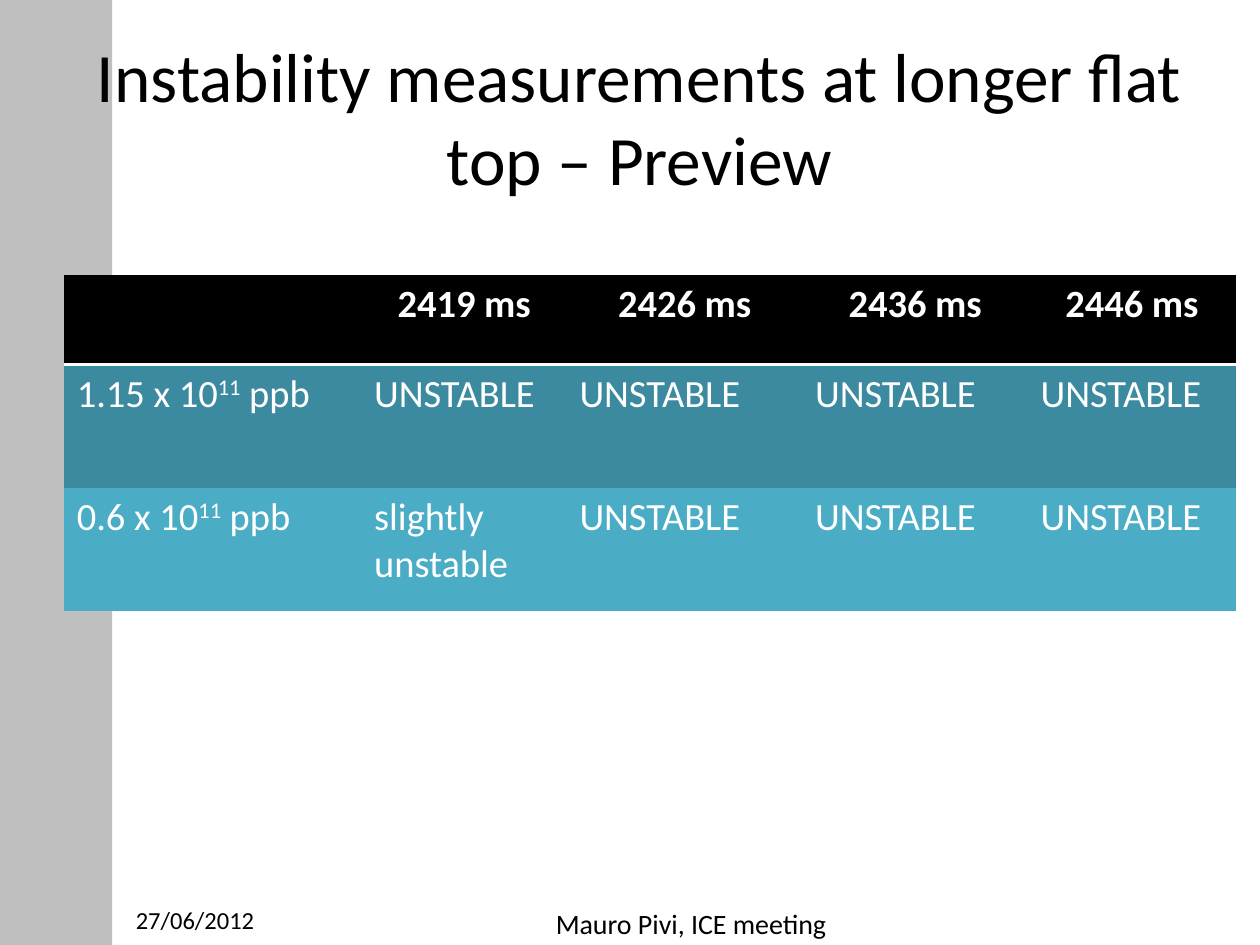
from dataclasses import dataclass

from lxml import etree
from pptx import Presentation
from pptx import util as u
from pptx.dml.color import RGBColor
from pptx.enum import shapes, text
from pptx.oxml.ns import qn


@dataclass(frozen=True)
class Theme:
    font: str = "Calibri"
    ink: str = "000000"
    paper: str = "FFFFFF"
    band: str = "BFBFBF"
    row_fills: tuple = ("000000", "3C8A9F", "4BACC6")
    title_size: float = 39.6
    table_size: float = 22
    date_size: float = 14
    footer_size: float = 16


@dataclass(frozen=True)
class Box:
    """Left, top, width and height in percent of the slide."""
    left: float
    top: float
    width: float
    height: float


@dataclass(frozen=True)
class Label:
    words: str
    box: Box
    size: float
    align: text.PP_ALIGN


THEME = Theme()
WIDTH, HEIGHT = u.Inches(10), u.Inches(7.5)
LEFT, CENTER = text.PP_ALIGN.LEFT, text.PP_ALIGN.CENTER
NO_TABLE_STYLE = "{2D5ABB26-0587-4C30-8999-92F81FD0307C}"

TABLE_BOX = Box(5.1, 29.07, 93, 35.6)
COLUMN_SHARES = (23.6, 16.3, 18.7, 17.9, 16.5)
ROW_SHARES = (9.47, 13.07, 13.07)
# A caret pair encloses superscript text
ROWS = (
    ("", "2419 ms", "2426 ms", "2436 ms", "2446 ms"),
    ("1.15 x 10^11^ ppb",) + ("UNSTABLE",) * 4,
    ("0.6 x 10^11^ ppb", "slightly unstable") + ("UNSTABLE",) * 3,
)
FOOTER_LABELS = (
    Label("27/06/2012", Box(9.8, 94.67, 23.3, 5.33), THEME.date_size, LEFT),
    Label("Mauro Pivi, ICE meeting", Box(39, 95.07, 31.7, 5.33),
          THEME.footer_size, CENTER),
)


def across(share: float) -> int:
    return round(WIDTH * share / 100)


def down(share: float) -> int:
    return round(HEIGHT * share / 100)


def place(box: Box) -> tuple:
    return across(box.left), down(box.top), across(box.width), down(box.height)


def style_run(run, size: float, color: str, bold: bool = False) -> None:
    run.font.name = THEME.font
    run.font.size = u.Pt(size)
    run.font.bold = bold
    run.font.color.rgb = RGBColor.from_string(color)


def write(frame, words: str, size: float, align) -> None:
    frame.word_wrap = True
    frame.auto_size = text.MSO_AUTO_SIZE.NONE
    frame.vertical_anchor = text.MSO_ANCHOR.MIDDLE
    frame.text = words
    paragraph = frame.paragraphs[0]
    paragraph.alignment = align
    style_run(paragraph.runs[0], size, THEME.ink)


def add_band(slide) -> None:
    band = slide.shapes.add_shape(shapes.MSO_SHAPE.RECTANGLE,
                                  *place(Box(0, 0, 8.9, 100)))
    band.shadow.inherit = False
    band.fill.solid()
    band.fill.fore_color.rgb = RGBColor.from_string(THEME.band)
    band.line.fill.background()
    slide.shapes._spTree.insert(2, band._element)  # behind the title


def add_label(slide, label: Label) -> None:
    shape = slide.shapes.add_textbox(*place(label.box))
    write(shape.text_frame, label.words, label.size, label.align)


def rule_below(cell, color: str, points: float) -> None:
    properties = cell._tc.get_or_add_tcPr()
    line = etree.Element(qn("a:lnB"), w=str(u.Pt(points)))
    fill = etree.SubElement(line, qn("a:solidFill"))
    etree.SubElement(fill, qn("a:srgbClr"), val=color)
    properties.insert(0, line)


def fill_cell(cell, words: str, fill: str, header: bool) -> None:
    cell.fill.solid()
    cell.fill.fore_color.rgb = RGBColor.from_string(fill)
    paragraph = cell.text_frame.paragraphs[0]
    paragraph.alignment = CENTER if header else LEFT
    paragraph.font.size = u.Pt(THEME.table_size)
    for index, part in enumerate(words.split("^")):
        if not part:
            continue
        run = paragraph.add_run()
        run.text = part
        style_run(run, THEME.table_size, THEME.paper, header)
        if index % 2:
            run.font._element.set("baseline", "30000")
    if header:
        rule_below(cell, THEME.paper, 2)


def add_results(slide) -> None:
    frame = slide.shapes.add_table(len(ROWS), len(COLUMN_SHARES),
                                   *place(TABLE_BOX))
    table = frame.table
    table._tbl.tblPr.find(qn("a:tableStyleId")).text = NO_TABLE_STYLE
    table.horz_banding = False
    for column, share in zip(table.columns, COLUMN_SHARES):
        column.width = across(share)
    for row, share in zip(table.rows, ROW_SHARES):
        row.height = down(share)
    for r, (entries, fill) in enumerate(zip(ROWS, THEME.row_fills)):
        for c, words in enumerate(entries):
            fill_cell(table.cell(r, c), words, fill, header=r == 0)


def main() -> None:
    presentation = Presentation()
    presentation.slide_width, presentation.slide_height = WIDTH, HEIGHT
    slide = presentation.slides.add_slide(presentation.slide_layouts[5])

    # Title
    title = slide.shapes.title
    title.left, title.top, title.width, title.height = place(
        Box(5, 4, 91.5, 16.67))
    write(title.text_frame,
          "Instability measurements at longer flat top – Preview",
          THEME.title_size, CENTER)

    # Side band, table and footer
    add_band(slide)
    add_results(slide)
    for label in FOOTER_LABELS:
        add_label(slide, label)

    presentation.save("out.pptx")


if __name__ == "__main__":
    main()
